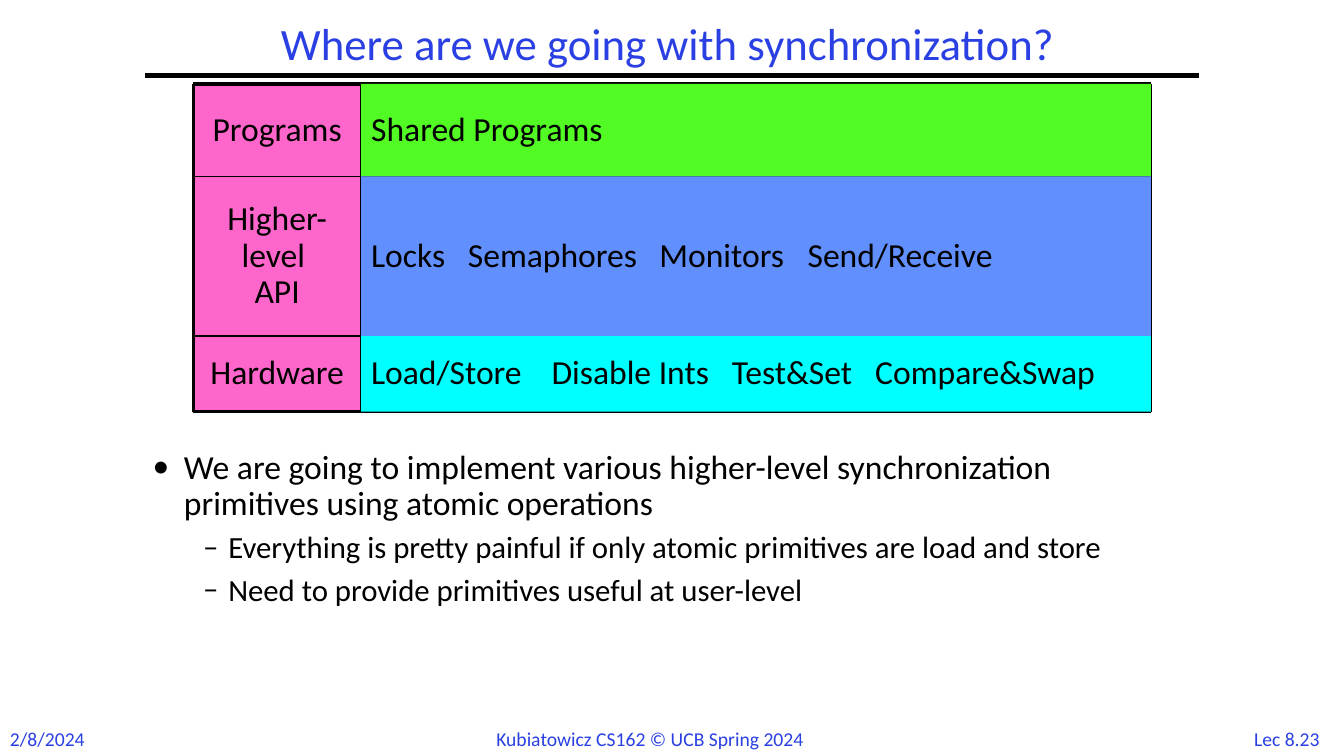
from itertools import accumulate

from lxml.etree import SubElement
from pptx import Presentation
from pptx.dml.color import RGBColor
from pptx.enum.shapes import MSO_CONNECTOR, MSO_SHAPE
from pptx.enum.text import MSO_ANCHOR, PP_ALIGN
from pptx.oxml.ns import qn
from pptx.util import Inches, Pt

COLUMNS, ROWS = 160, 90
FONT = "Calibri"
BLUE = RGBColor(0x2A, 0x40, 0xE2)
BLACK = RGBColor(0, 0, 0)
PINK = RGBColor(0xFF, 0x66, 0xCC)
GREEN = RGBColor(0x53, 0xFB, 0x25)
PERIWINKLE = RGBColor(0x61, 0x8F, 0xFD)
CYAN = RGBColor(0, 0xFF, 0xFF)

LAYERS = [
    ("Programs", "Shared Programs", GREEN, 11, []),
    ("Higher-level \vAPI", "Locks\tSemaphores\tMonitors\tSend/Receive", PERIWINKLE, 19,
     [0.96, 2.86, 4.33]),
    ("Hardware", "Load/Store\tDisable Ints\tTest&Set\tCompare&Swap", CYAN, 9,
     [1.79, 3.58, 5]),
]
POINTS = [
    ("We are going to implement various higher-level synchronization primitives "
     "using atomic operations", 0),
    ("Everything is pretty painful if only atomic primitives are load and store", 1),
    ("Need to provide primitives useful at user-level", 1),
]
LEVELS = [("•", 24, 0.31, 0.31), ("–", 22, 0.75, 0.25)]
FOOTERS = [
    ("2/8/2024", 0, 12, PP_ALIGN.LEFT),
    ("Kubiatowicz CS162 © UCB Spring 2024", 57.9, 44.2, PP_ALIGN.LEFT),
    ("Lec 8.23", 147.4, 11.6, PP_ALIGN.CENTER),
]


def grid(*cells):
    """Turn grid counts, twelve to the inch, into lengths."""
    return [Inches(cell / 12) for cell in cells]


def write(paragraph, text, size, color, alignment=PP_ALIGN.LEFT, line_spacing=0.9):
    """Fill one paragraph and format its runs."""
    paragraph.text = text
    paragraph.alignment = alignment
    paragraph.line_spacing = line_spacing
    for run in paragraph.runs:
        run.font.name = FONT
        run.font.size = Pt(size)
        run.font.color.rgb = color


def add_line(slide, start_x, start_y, end_x, end_y, width):
    """Draw a straight black line between two grid points."""
    line = slide.shapes.add_connector(
        MSO_CONNECTOR.STRAIGHT, *grid(start_x, start_y, end_x, end_y))
    line.line.color.rgb = BLACK
    line.line.width = Pt(width)
    SubElement(line._element.spPr, qn("a:effectLst"))


def add_heading(slide, left, top, width, height):
    """Place the title and the rule below it."""
    title = slide.shapes.title
    title.left, title.top, title.width, title.height = grid(left, top, width, height)
    title.text_frame.vertical_anchor = MSO_ANCHOR.MIDDLE
    write(title.text_frame.paragraphs[0], "Where are we going with synchronization?",
          32, BLUE, PP_ALIGN.CENTER)
    bottom = top + height
    add_line(slide, left - 8.7, bottom, left + width + 9.7, bottom, 3)


def add_box(slide, box, text, fill, alignment, stops=()):
    """Place one filled box with its text and tab stops."""
    shape = slide.shapes.add_shape(MSO_SHAPE.RECTANGLE, *grid(*box))
    shape.shadow.inherit = False
    shape.fill.solid()
    shape.fill.fore_color.rgb = fill
    shape.line.fill.background()
    frame = shape.text_frame
    frame.word_wrap = True
    frame.vertical_anchor = MSO_ANCHOR.MIDDLE
    paragraph = frame.paragraphs[0]
    write(paragraph, text, 24, BLACK, alignment)
    if stops:
        tab_list = SubElement(paragraph._p.get_or_add_pPr(), qn("a:tabLst"))
        for stop in stops:
            SubElement(tab_list, qn("a:tab"), pos=str(Inches(stop)), algn="l")


def add_layers(slide, left, top, label_width, content_width):
    """Stack the layers, from programs down to hardware, with their frame lines."""
    edges = list(accumulate([layer[3] for layer in LAYERS], initial=top))
    middle = left + label_width
    right, bottom = middle + content_width, edges[-1]
    for (label, _, _, height, _), edge in zip(LAYERS, edges):
        add_box(slide, (left, edge, label_width, height), label, PINK, PP_ALIGN.CENTER)
    for edge in edges:
        add_line(slide, left, edge, right, edge, 2.25 if edge in (top, bottom) else 1)
    for edge in (left, middle, right):
        add_line(slide, edge, top, edge, bottom, 1 if edge == middle else 2.25)
    for (_, content, color, height, stops), edge in zip(LAYERS, edges):
        add_box(slide, (middle, edge, content_width, height), content, color,
                PP_ALIGN.LEFT, stops)


def add_points(slide, left, top, width, height):
    """Place the bulleted text."""
    frame = slide.shapes.add_textbox(*grid(left, top, width, height)).text_frame
    frame.word_wrap = True
    for index, (text, level) in enumerate(POINTS):
        paragraph = frame.add_paragraph() if index else frame.paragraphs[0]
        bullet, size, margin, hanging = LEVELS[level]
        write(paragraph, text, size, BLACK)
        paragraph.level = level
        paragraph.space_before = Pt(0.3 * size)
        properties = paragraph._p.get_or_add_pPr()
        properties.set("marL", str(Inches(margin)))
        properties.set("indent", str(-Inches(hanging)))
        SubElement(properties, qn("a:buFont"), typeface=FONT)
        SubElement(properties, qn("a:buChar"), char=bullet)


def add_footers(slide, top, height):
    """Place the date, the course and the page number along the bottom."""
    for text, left, width, alignment in FOOTERS:
        frame = slide.shapes.add_textbox(*grid(left, top, width, height)).text_frame
        frame.word_wrap = True
        write(frame.paragraphs[0], text, 14, BLUE, alignment, 1)


def main():
    """Build the slide and save it."""
    presentation = Presentation()
    presentation.slide_width, presentation.slide_height = grid(COLUMNS, ROWS)
    slide = presentation.slides.add_slide(presentation.slide_layouts[5])
    add_heading(slide, 26, 2, 107, 7)
    add_layers(slide, 23, 10, 20, 94)
    add_points(slide, 17, 53, 124, 28)
    add_footers(slide, 86, 4)
    presentation.save("out.pptx")


if __name__ == "__main__":
    main()
